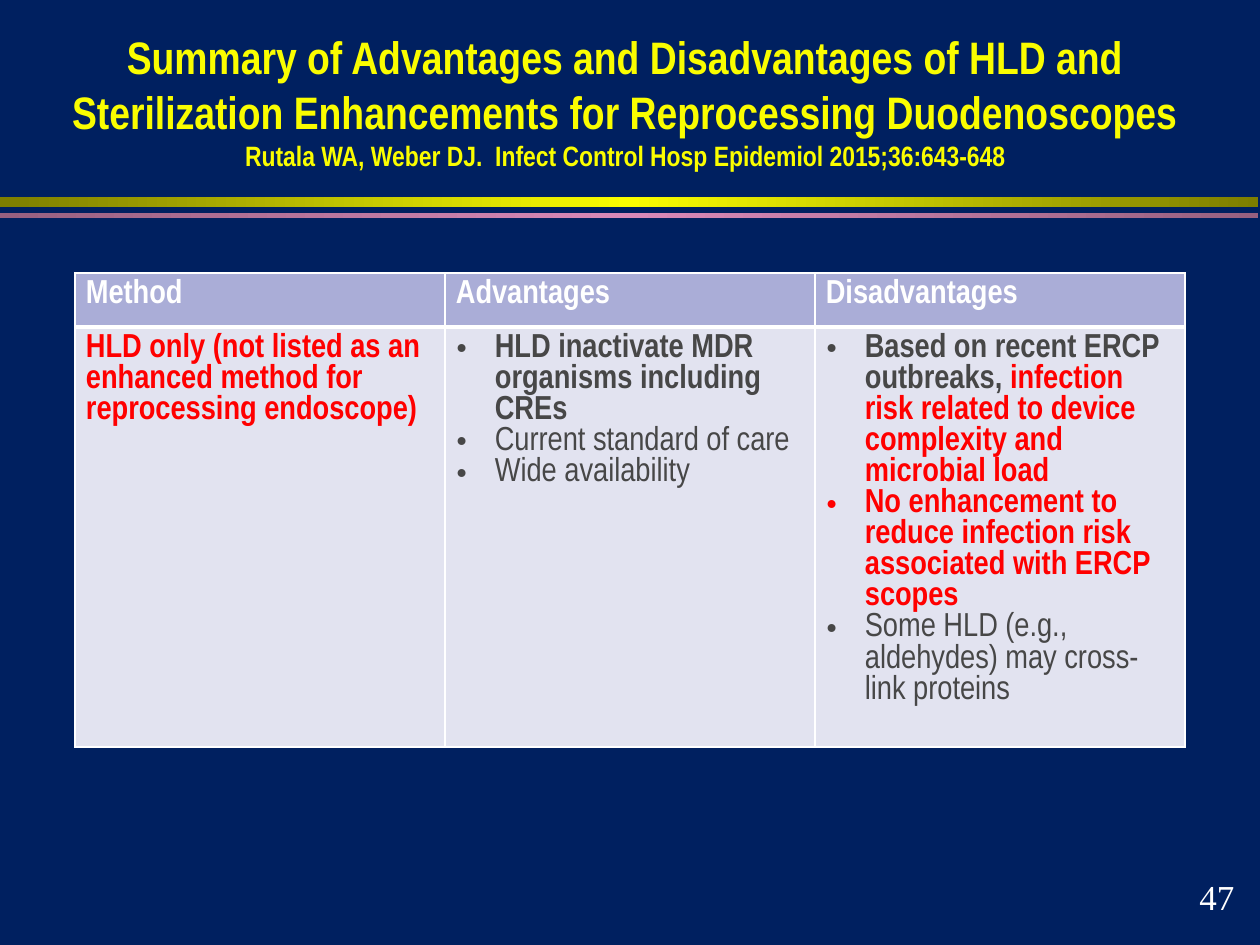
import copy

import pptx
import pptx.dml.color
import pptx.enum.shapes
import pptx.enum.text
import pptx.oxml
import pptx.oxml.ns
import pptx.util

NS = pptx.oxml.ns.nsdecls("a")
ANCHOR = pptx.enum.text.MSO_ANCHOR
ALIGN = pptx.enum.text.PP_ALIGN
YELLOW, WHITE, RED, GREY = "FAFD00", "FFFFFF", "FF0000", "474747"


def px(length):
    return pptx.util.Emu(round(length * 914400 / 126))


def rgb(value):
    return pptx.dml.color.RGBColor.from_string(value)


class SlideStyle:
    narrow = "Arial Narrow"
    serif = "Times New Roman"
    table_size = 19
    bullet_indent = 39

    def __init__(self, slide, background):
        self.slide = slide
        slide.background.fill.solid()
        slide.background.fill.fore_color.rgb = rgb(background)

    def set_font(self, font, size, color, bold=False, face=narrow):
        font.name = face
        font.size = pptx.util.Pt(size)
        font.bold = bold
        font.color.rgb = rgb(color)

    def band(self, left, top, width, height, edge, middle):
        bar = self.slide.shapes.add_shape(
            pptx.enum.shapes.MSO_SHAPE.RECTANGLE,
            px(left), px(top), px(width), px(height))
        bar.shadow.inherit = False
        bar.line.fill.background()
        bar.fill.gradient()
        bar.fill.gradient_angle = 0
        stops = bar._element.spPr.find(".//" + pptx.oxml.ns.qn("a:gsLst"))
        stops.append(copy.deepcopy(stops[0]))
        for stop, position, color in zip(
                bar.fill.gradient_stops, (0, 0.5, 1), (edge, middle, edge)):
            stop.position = position
            stop.color.rgb = rgb(color)

    def text(self, left, top, width, height, anchor=ANCHOR.TOP, wrap=True):
        box = self.slide.shapes.add_textbox(
            px(left), px(top), px(width), px(height))
        frame = box.text_frame
        frame.word_wrap = wrap
        frame.vertical_anchor = anchor
        return frame.paragraphs[0]

    def title(self, left, top, width, height, heading, citation):
        paragraph = self.text(left, top, width, height, ANCHOR.BOTTOM)
        paragraph.alignment = ALIGN.CENTER
        heading_run = paragraph.add_run()
        heading_run.text = heading
        self.set_font(heading_run.font, 26, YELLOW, True)
        paragraph.add_line_break()
        citation_run = paragraph.add_run()
        citation_run.text = citation
        self.set_font(citation_run.font, 16, YELLOW, True)

    def page_number(self, left, top, width, height, number):
        paragraph = self.text(left, top, width, height, wrap=False)
        paragraph.text = number
        self.set_font(paragraph.font, 20, WHITE, face=self.serif)

    def bullet(self, paragraph):
        properties = paragraph._p.get_or_add_pPr()
        indent = px(self.bullet_indent)
        properties.set("marL", str(indent))
        properties.set("indent", str(-indent))
        properties.append(pptx.oxml.parse_xml(
            f'<a:buFont {NS} typeface="{self.serif}"/>'))
        properties.append(pptx.oxml.parse_xml(f'<a:buChar {NS} char="•"/>'))

    def borders(self, cell, **widths):
        properties = cell._tc.get_or_add_tcPr()
        for index, (side, width) in enumerate(widths.items()):
            properties.insert(index, pptx.oxml.parse_xml(
                f'<a:ln{side} {NS} w="{pptx.util.Pt(width)}"><a:solidFill>'
                f'<a:srgbClr val="{WHITE}"/></a:solidFill></a:ln{side}>'))

    def cell(self, cell, paragraphs, fill, bulleted, top_border, bottom_border):
        cell.fill.solid()
        cell.fill.fore_color.rgb = rgb(fill)
        cell.margin_left = cell.margin_right = px(11)
        cell.margin_top = cell.margin_bottom = px(6)
        self.borders(cell, L=1, R=1, T=top_border, B=bottom_border)
        frame = cell.text_frame
        for index, runs in enumerate(paragraphs):
            paragraph = frame.add_paragraph() if index else frame.paragraphs[0]
            if bulleted:
                self.bullet(paragraph)
            for words, color, bold in runs:
                run = paragraph.add_run()
                run.text = words
                self.set_font(run.font, self.table_size, color, bold)

    def table(self, left, top, column_width, row_heights, headers, body):
        grid = self.slide.shapes.add_table(
            2, len(headers), px(left), px(top),
            px(column_width * len(headers)), px(sum(row_heights))).table
        for row, height in zip(grid.rows, row_heights):
            row.height = px(height)
        for index, (header, points) in enumerate(zip(headers, body)):
            grid.columns[index].width = px(column_width)
            self.cell(grid.cell(0, index), [[(header, WHITE, True)]],
                      "AAADD7", False, 1, 3)
            self.cell(grid.cell(1, index), points,
                      "E2E3F0", index > 0, 3, 1)


def main():
    deck = pptx.Presentation()
    deck.slide_width, deck.slide_height = px(1260), px(945)
    page = SlideStyle(deck.slides.add_slide(deck.slide_layouts[6]), "002060")

    page.band(0, 197, 1258, 10, "7D7E00", YELLOW)
    page.band(0, 213, 1258, 5, "976080", "D989B8")

    method = [[("HLD only (not listed as an enhanced method for "
                "reprocessing endoscope)", RED, True)]]
    advantages = [
        [("HLD inactivate MDR organisms including CREs", GREY, True)],
        [("Current standard of care", GREY, False)],
        [("Wide availability", GREY, False)],
    ]
    disadvantages = [
        [("Based on recent ERCP outbreaks, ", GREY, True),
         ("infection risk related to device complexity and microbial load",
          RED, True)],
        [("No enhancement to reduce infection risk associated with ERCP "
          "scopes", RED, True)],
        [("Some HLD (e.g., aldehydes) may cross-link proteins", GREY, False)],
    ]
    page.table(75, 273, 370, (54, 420),
               ("Method", "Advantages", "Disadvantages"),
               (method, advantages, disadvantages))

    page.title(56, 20, 1139, 158,
               "Summary of Advantages and Disadvantages of HLD and "
               "Sterilization Enhancements for Reprocessing Duodenoscopes",
               "Rutala WA, Weber DJ.  Infect Control Hosp Epidemiol "
               "2015;36:643-648")
    page.page_number(1187, 869, 60, 55, "47")
    deck.save("out.pptx")


if __name__ == "__main__":
    main()
